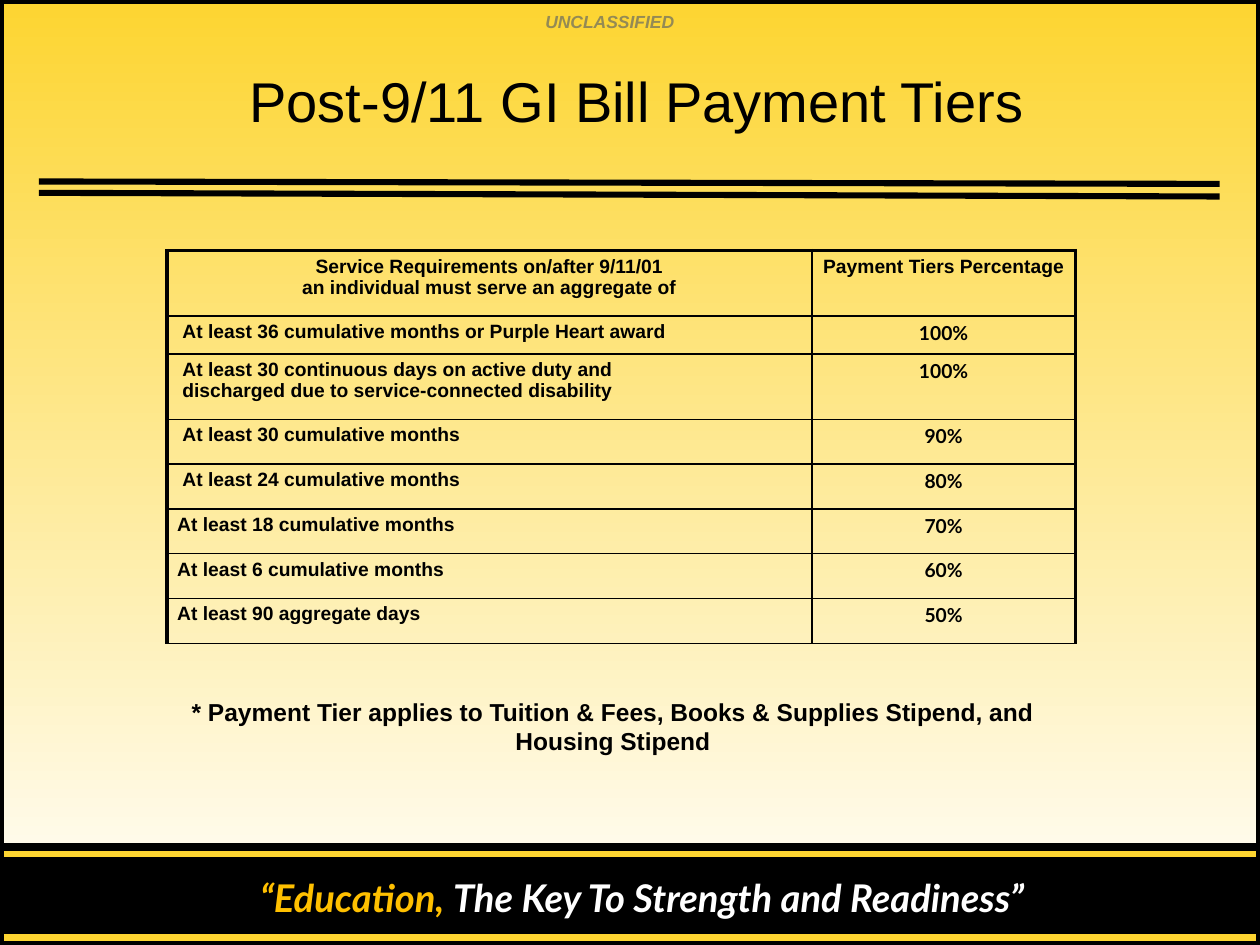
"""Build the Post-9/11 GI Bill payment tiers slide."""
from dataclasses import dataclass

from lxml.etree import SubElement
from pptx import Presentation
from pptx.dml.color import RGBColor
from pptx.enum.shapes import MSO_CONNECTOR as Conn, MSO_SHAPE as Shape
from pptx.enum.text import MSO_ANCHOR as Anchor, PP_ALIGN as Align
from pptx.oxml.ns import qn
from pptx.util import Pt

BLACK, WHITE, YELLOW, AMBER, KHAKI = "000000", "FFFFFF", "FDD531", "FFC000", "948A54"
SANS, MOTTO = "Arial", "Lato"


@dataclass
class Run:
    text: str
    size: float
    font: str = SANS
    color: str = BLACK
    bold: bool = True
    italic: bool = False


@dataclass
class Box:
    left: float
    top: float
    width: float
    height: float

    def pts(self) -> tuple:
        return Pt(self.left), Pt(self.top), Pt(self.width), Pt(self.height)


@dataclass
class Rule:
    x1: float
    y1: float
    x2: float
    y2: float
    color: str


@dataclass
class Tier:
    lines: tuple
    share: str
    height: float
    indent: float = 0


RULES = (
    Rule(0, 488.2, 720, 488.2, YELLOW),
    Rule(-2, 535.7, 718, 535.7, YELLOW),
    Rule(22.3, 103.7, 697, 105.1, BLACK),
    Rule(22.3, 110.2, 697, 112.3, BLACK),
)
HEADER = Tier(("Service Requirements on/after 9/11/01",
               "an individual must serve an aggregate of"),
              "Payment Tiers Percentage", 37.4)
TIERS = (
    Tier(("At least 36 cumulative months or Purple Heart award",), "100%", 21.6, 3),
    Tier(("At least 30 continuous days on active duty and",
          "discharged due to service-connected disability"), "100%", 37.4, 3),
    Tier(("At least 30 cumulative months",), "90%", 25.6, 3),
    Tier(("At least 24 cumulative months",), "80%", 25.6, 3),
    Tier(("At least 18 cumulative months",), "70%", 25.6),
    Tier(("At least 6 cumulative months",), "60%", 25.6),
    Tier(("At least 90 aggregate days",), "50%", 25.6),
)


def rgb(color: str) -> RGBColor:
    return RGBColor.from_string(color)


def add_run(p, run: Run) -> None:
    r = p.add_run()
    r.text = run.text
    f = r.font
    f.size, f.name, f.bold, f.italic = Pt(run.size), run.font, run.bold, run.italic
    f.color.rgb = rgb(run.color)


def fill_frame(tf, lines: list, align, wrap: bool = True) -> None:
    tf.word_wrap = wrap
    tf.vertical_anchor = Anchor.TOP
    for i, runs in enumerate(lines):
        p = tf.paragraphs[0] if i == 0 else tf.add_paragraph()
        p.alignment = align
        for run in runs:
            add_run(p, run)


def add_text(s, box: Box, runs: list, wrap: bool = True) -> None:
    tf = s.shapes.add_textbox(*box.pts()).text_frame
    fill_frame(tf, [runs], Align.CENTER, wrap)


def add_rect(s, box: Box, weight: float, fill: str = "") -> None:
    sp = s.shapes.add_shape(Shape.RECTANGLE, *box.pts())
    sp.shadow.inherit = False
    if fill:
        sp.fill.solid()
        sp.fill.fore_color.rgb = rgb(fill)
    else:
        sp.fill.background()
    sp.line.color.rgb = rgb(BLACK)
    sp.line.width = Pt(weight)


def add_rule(s, rule: Rule) -> None:
    ends = (Pt(v) for v in (rule.x1, rule.y1, rule.x2, rule.y2))
    cx = s.shapes.add_connector(Conn.STRAIGHT, *ends)
    cx.line.color.rgb = rgb(rule.color)
    cx.line.width = Pt(3.5)
    SubElement(cx._element.spPr, qn("a:effectLst"))


def style_cell(cell, borders: dict, indent: float) -> None:
    tc_pr = cell._tc.get_or_add_tcPr()
    for side in "LRTB":
        ln = SubElement(tc_pr, qn(f"a:ln{side}"), w=str(Pt(borders.get(side, 1))))
        SubElement(SubElement(ln, qn("a:solidFill")), qn("a:srgbClr"), val=BLACK)
    cell.fill.background()
    cell.margin_left, cell.margin_right = Pt(5.8 + indent), Pt(5.8)
    cell.margin_top = cell.margin_bottom = Pt(2.9)


def add_tiers(s, box: Box, widths: tuple) -> None:
    rows = (HEADER, *TIERS)
    table = s.shapes.add_table(len(rows), len(widths), *box.pts()).table
    table.first_row = table.horz_banding = False
    for col, width in zip(table.columns, widths):
        col.width = Pt(width)
    for i, tier in enumerate(rows):
        table.rows[i].height = Pt(tier.height)
        head = tier is HEADER
        top = {"T": 2.25} if head else {}
        left, right = table.cell(i, 0), table.cell(i, 1)
        style_cell(left, {"L": 2.25, **top}, tier.indent)
        style_cell(right, {"R": 2.25, **top}, 0)
        fill_frame(left.text_frame, [[Run(t, 11)] for t in tier.lines],
                   Align.CENTER if head else Align.LEFT)
        font = SANS if head else MOTTO
        fill_frame(right.text_frame, [[Run(tier.share, 11, font)]], Align.CENTER)


def paint_background(s) -> None:
    fill = s.background.fill
    fill.gradient()
    fill.gradient_angle = 90
    for stop, color, pos in zip(fill.gradient_stops, (WHITE, YELLOW), (0, 1)):
        stop.color.rgb = rgb(color)
        stop.position = pos


def add_title(s, box: Box, run: Run) -> None:
    sp = s.shapes.title
    sp.left, sp.top, sp.width, sp.height = box.pts()
    tf = sp.text_frame
    tf.margin_left = tf.margin_right = Pt(5.8)
    tf.margin_top = tf.margin_bottom = Pt(2.9)
    fill_frame(tf, [[run]], Align.CENTER)


def main() -> None:
    prs = Presentation()
    prs.slide_width, prs.slide_height = Pt(720), Pt(540)
    s = prs.slides.add_slide(prs.slide_layouts[5])
    paint_background(s)
    add_rect(s, Box(-2, 483, 720, 54), 2, BLACK)
    add_text(s, Box(303.8, 2.9, 89.3, 19.4),
             [Run("UNCLASSIFIED", 10, color=KHAKI, italic=True)], wrap=False)
    add_text(s, Box(91.4, 496, 551.5, 33.8),
             [Run("“Education, ", 21.8, MOTTO, AMBER, italic=True),
              Run("The Key To Strength and Readiness”", 21.8, MOTTO, WHITE, italic=True)],
             wrap=False)
    for rule in RULES:
        add_rule(s, rule)
    add_rect(s, Box(0, 0, 720, 540), 4.75)
    add_tiers(s, Box(95.4, 143.2, 519.1, 224.4), (368.6, 150.5))
    add_text(s, Box(85.7, 394.6, 529.2, 22.3),
             [Run("* Payment Tier applies to Tuition & Fees, Books & Supplies Stipend, "
                  "and Housing Stipend", 14)])
    add_title(s, Box(133.2, 35.3, 461.5, 44.6),
              Run("Post-9/11 GI Bill Payment Tiers", 32, bold=False))
    prs.save("out.pptx")


if __name__ == "__main__":
    main()
